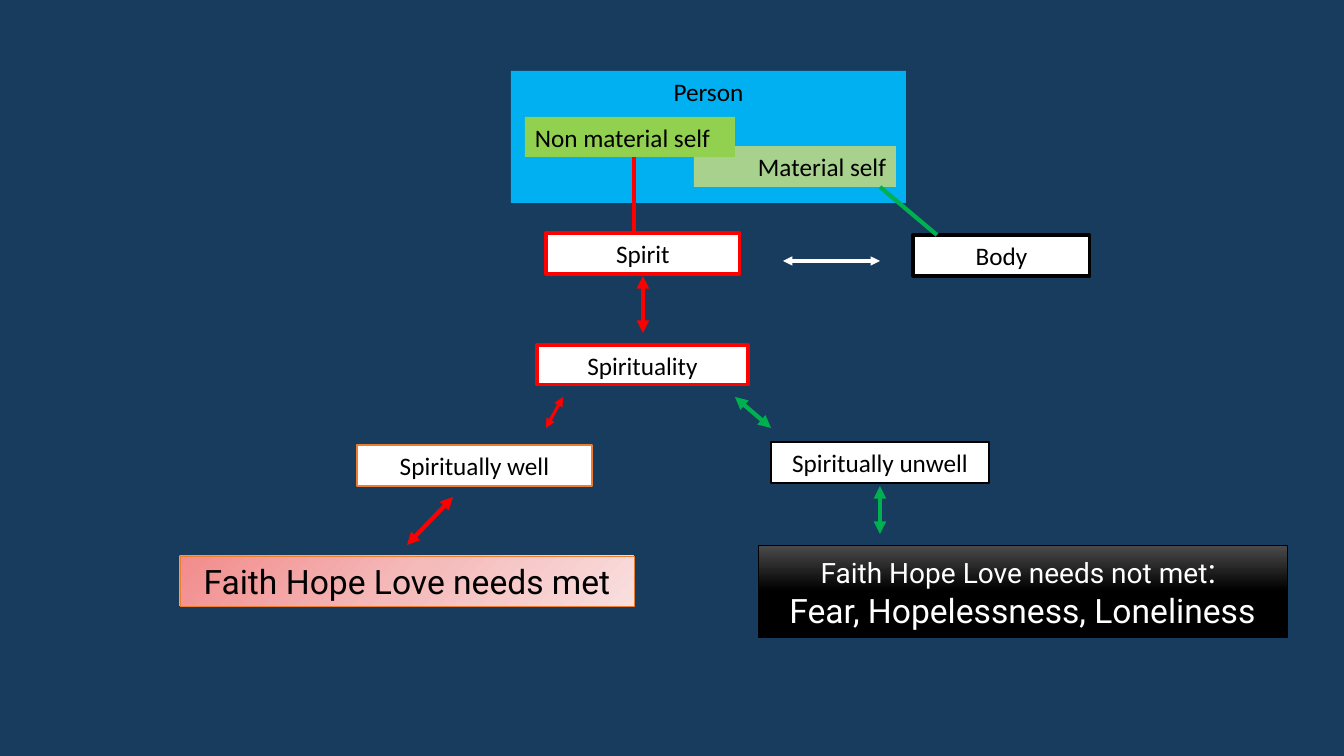
from pptx import Presentation
from pptx.dml.color import RGBColor
from pptx.enum.shapes import MSO_CONNECTOR, MSO_SHAPE
from pptx.enum.text import MSO_ANCHOR, PP_ALIGN
from pptx.oxml import parse_xml
from pptx.oxml.ns import nsdecls, qn
from pptx.util import Pt
from lxml import etree

THEME = dict(
    background="173C5D", sky="00B0F0", sage="A9D18E", lime="92D050",
    red="FF0000", green="00B050", orange="ED7D31", black="000000", white="FFFFFF",
    body_font="Calibri", need_font="Roboto", body=18, need_small=20, need=24,
)
GRADIENTS = {
    "blush": ([(0, "F28C8C"), (50, "F5BABA"), (100, "F9DEDE")],
              '<a:path path="circle"><a:fillToRect r="100000" b="100000"/></a:path>'),
    "night": ([(0, "4B4B4B"), (50, "000000"), (100, "000000")],
              '<a:lin ang="5400000" scaled="0"/>'),
}
LEFT, CENTER, RIGHT = PP_ALIGN.LEFT, PP_ALIGN.CENTER, PP_ALIGN.RIGHT

# Concept boxes, back to front: text, (x, y, w, h), fill, (line, pt), alignment
CONCEPTS = [
    ("Person", (511, 71, 395, 132), "sky", None, CENTER),
    ("Material self", (694, 146, 202, 41), "sage", None, RIGHT),
    ("Non material self", (525, 117, 210, 40), "lime", None, LEFT),
    ("Body", (913, 235, 177, 41), "white", ("black", 2.25), CENTER),
    ("Spirit", (546, 233, 194, 41), "white", ("red", 2.25), CENTER),
    ("Spiritually well", (357, 445, 235, 41), "white", ("orange", 1), CENTER),
    ("Spiritually unwell", (771, 442, 218, 41), "white", ("black", 1), CENTER),
    ("Spirituality", (537, 345, 211, 40), "white", ("red", 2.25), CENTER),
]

# Need boxes: paragraphs of (text, size) runs, (x, y, w, h), gradient, (line, pt), text colour
NEEDS = [
    ([[("Faith Hope Love needs met", "need")]],
     (180, 556, 454, 50), "blush", ("orange", 0.5), "black"),
    ([[("Faith Hope Love needs not met", "need_small"), (": ", "need")],
      [("Fear, Hopelessness, Loneliness", "need")]],
     (758, 545, 529, 92), "night", ("black", 0.5), "white"),
]

# Links: (x1, y1, x2, y2), colour, pt, arrowheads at both ends
LINKS = [
    ((783, 261, 880, 261), "white", 2.25, True),
    ((643, 276, 643, 333), "red", 3, True),
    ((563, 397, 546, 428), "red", 2.25, True),
    ((735, 397, 771, 428), "green", 3, True),
    ((453, 497, 407, 545), "red", 3, True),
    ((880, 486, 880, 534), "green", 3, True),
    ((634, 157, 634, 233), "red", 2.25, False),
    ((880, 187, 937, 235), "green", 3, False),
]


def px(n):
    return round(n * 914400 / 100.8)


def color(name):
    return RGBColor.from_string(THEME[name])


def set_gradient(sp, name):
    stops, direction = GRADIENTS[name]
    gs = "".join(f'<a:gs pos="{pos * 1000}"><a:srgbClr val="{rgb}"/></a:gs>'
                 for pos, rgb in stops)
    grad = parse_xml(f'<a:gradFill {nsdecls("a")} rotWithShape="1">'
                     f'<a:gsLst>{gs}</a:gsLst>{direction}</a:gradFill>')
    sp._element.spPr.find(qn("a:prstGeom")).addnext(grad)


def add_box(s, paragraphs, box, fill, line, font, text_color, align):
    sp = s.shapes.add_shape(MSO_SHAPE.RECTANGLE, *map(px, box))
    sp.shadow.inherit = False
    if fill in GRADIENTS:
        set_gradient(sp, fill)
    else:
        sp.fill.solid()
        sp.fill.fore_color.rgb = color(fill)
    if line:
        sp.line.color.rgb = color(line[0])
        sp.line.width = Pt(line[1])
    else:
        sp.line.fill.background()
    tf = sp.text_frame
    tf.word_wrap = True
    tf.vertical_anchor = MSO_ANCHOR.TOP
    for i, runs in enumerate(paragraphs):
        p = tf.add_paragraph() if i else tf.paragraphs[0]
        p.alignment = align
        for text, size in runs:
            r = p.add_run()
            r.text = text
            r.font.name = THEME[font]
            r.font.size = Pt(THEME[size])
            r.font.color.rgb = color(text_color)


def add_link(s, ends, line_color, width, arrows):
    cx = s.shapes.add_connector(MSO_CONNECTOR.STRAIGHT, *map(px, ends))
    cx.line.color.rgb = color(line_color)
    cx.line.width = Pt(width)
    if arrows:
        ln = cx.line._get_or_add_ln()
        for end in ("a:headEnd", "a:tailEnd"):
            etree.SubElement(ln, qn(end), type="triangle")
    etree.SubElement(cx._element.spPr, qn("a:effectLst"))


def main():
    prs = Presentation()
    prs.slide_width, prs.slide_height = px(1344), px(756)
    s = prs.slides.add_slide(prs.slide_layouts[6])
    s.background.fill.solid()
    s.background.fill.fore_color.rgb = color("background")

    # Boxes
    for text, box, fill, line, align in CONCEPTS:
        add_box(s, [[(text, "body")]], box, fill, line, "body_font", "black", align)
    for paragraphs, box, fill, line, text_color in NEEDS:
        add_box(s, paragraphs, box, fill, line, "need_font", text_color, CENTER)

    # Lines and arrows
    for link in LINKS:
        add_link(s, *link)
    prs.save("out.pptx")


if __name__ == "__main__":
    main()
